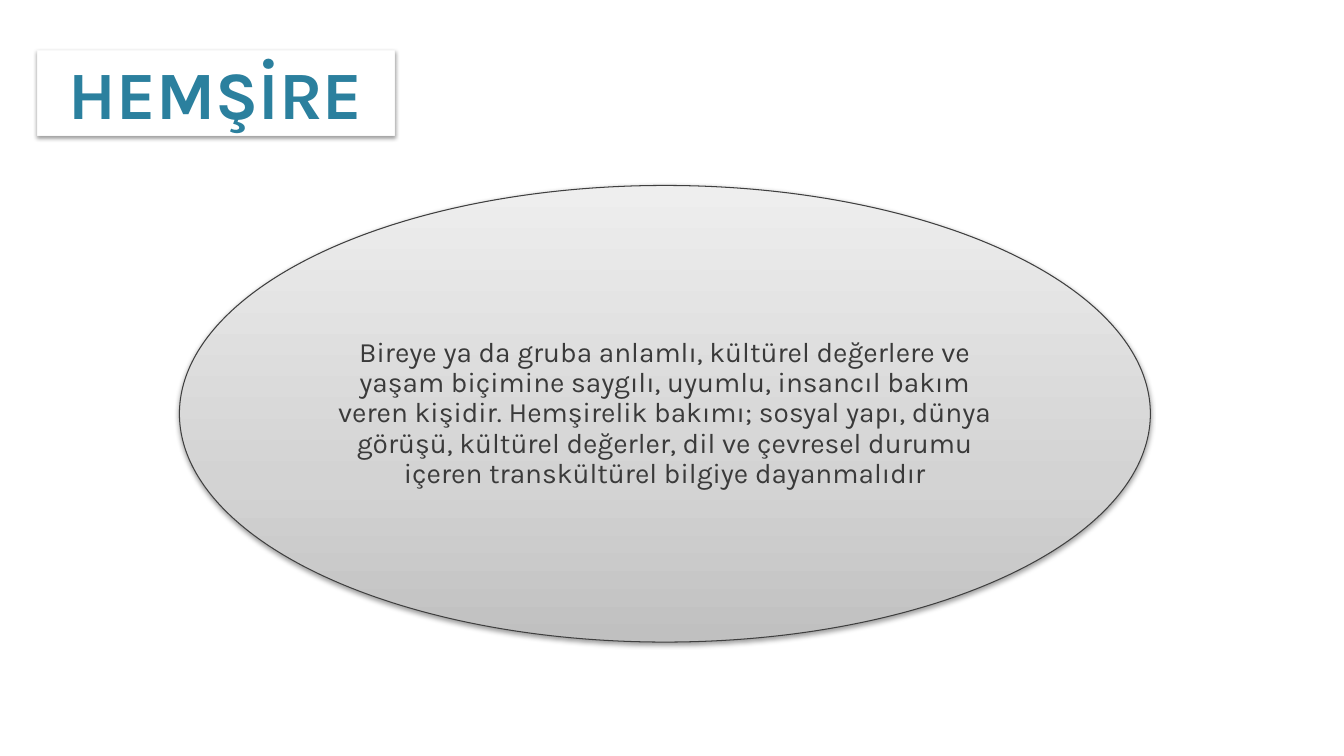
"""Build a slide that defines the nurse's role in a shaded ellipse."""
import lxml.etree
import pptx
import pptx.dml.color
import pptx.enum.shapes
import pptx.enum.text
import pptx.oxml.ns
import pptx.util

RGBColor = pptx.dml.color.RGBColor
WHITE = RGBColor(0xFF, 0xFF, 0xFF)
TITLE_BORDER = RGBColor(0xF9, 0xF9, 0xF9)
TEAL = RGBColor(0x2B, 0x80, 0x9E)
TEXT_GRAY = RGBColor(0x3A, 0x3A, 0x3A)
OUTLINE_GRAY = RGBColor(0x3F, 0x3F, 0x3F)
SHADOW_BLACK = RGBColor(0, 0, 0)
GRADIENT_STOPS = [
    (0, RGBColor(0xC0, 0xC0, 0xC0)),
    (35, RGBColor(0xD3, 0xD3, 0xD3)),
    (100, RGBColor(0xEE, 0xEE, 0xEE)),
]
FONT = "Karla"
DEFINITION = (
    "Bireye ya da gruba anlamlı, kültürel değerlere ve yaşam biçimine saygılı, "
    "uyumlu, insancıl bakım veren kişidir. Hemşirelik bakımı; sosyal yapı, dünya "
    "görüşü, kültürel değerler, dil ve çevresel durumu içeren transkültürel "
    "bilgiye dayanmalıdır"
)


def write_text(shape, text, size, color, bold=False, line_spacing=1.0, margins=(0, 0)):
    """Put centred, formatted text into a shape."""
    frame = shape.text_frame
    frame.word_wrap = True
    frame.auto_size = pptx.enum.text.MSO_AUTO_SIZE.NONE
    frame.vertical_anchor = pptx.enum.text.MSO_ANCHOR.MIDDLE
    frame.margin_left = frame.margin_right = pptx.util.Inches(margins[0])
    frame.margin_top = frame.margin_bottom = pptx.util.Inches(margins[1])
    paragraph = frame.paragraphs[0]
    paragraph.alignment = pptx.enum.text.PP_ALIGN.CENTER
    paragraph.line_spacing = line_spacing
    run = paragraph.add_run()
    run.text = text
    run.font.name = FONT
    run.font.size = pptx.util.Pt(size)
    run.font.bold = bold
    run.font.color.rgb = color


def add_color(parent, tag, color, **attributes):
    """Add an element that holds one colour and return the colour element."""
    element = lxml.etree.SubElement(parent, pptx.oxml.ns.qn(tag), **attributes)
    return lxml.etree.SubElement(element, pptx.oxml.ns.qn("a:srgbClr"), val=str(color))


presentation = pptx.Presentation()
presentation.slide_width = pptx.util.Inches(13.33)
presentation.slide_height = pptx.util.Inches(7.5)
slide = presentation.slides.add_slide(presentation.slide_layouts[5])

title = slide.shapes.title
title.left, title.top, title.width, title.height = map(
    pptx.util.Inches, (0.37, 0.5, 3.54, 0.84))
title.fill.solid()
title.fill.fore_color.rgb = WHITE
write_text(title, "HEMŞİRE", size=48.4, color=TEAL, bold=True, margins=(0.13, 0.07))

definition_group = slide.shapes.add_group_shape()
ellipse = definition_group.shapes.add_shape(
    pptx.enum.shapes.MSO_SHAPE.OVAL,
    *map(pptx.util.Inches, (1.78, 1.84, 9.63, 4.53)))
ellipse.fill.gradient()
ellipse.fill.gradient_angle = 90
stop_list = ellipse.element.spPr.find(".//" + pptx.oxml.ns.qn("a:gsLst"))
stop_list.clear()
for position, color in GRADIENT_STOPS:
    add_color(stop_list, "a:gs", color, pos=str(position * 1000))

definition = definition_group.shapes.add_textbox(
    *map(pptx.util.Inches, (3.19, 2.5, 6.81, 3.21)))
write_text(definition, DEFINITION, size=20, color=TEXT_GRAY, line_spacing=0.9,
           margins=(0.03, 0.03))

for shape, border in [(title, TITLE_BORDER), (ellipse, OUTLINE_GRAY)]:
    shape.line.color.rgb = border
    shape.line.width = pptx.util.Pt(0.75)
    shape.shadow.inherit = False
    effects = shape.element.spPr.find(pptx.oxml.ns.qn("a:effectLst"))
    shadow_color = add_color(
        effects, "a:outerShdw", SHADOW_BLACK, blurRad=str(pptx.util.Pt(3.1)),
        dist=str(pptx.util.Pt(1.6)), dir="5400000", rotWithShape="0")
    lxml.etree.SubElement(shadow_color, pptx.oxml.ns.qn("a:alpha"), val="38000")

presentation.save("out.pptx")
